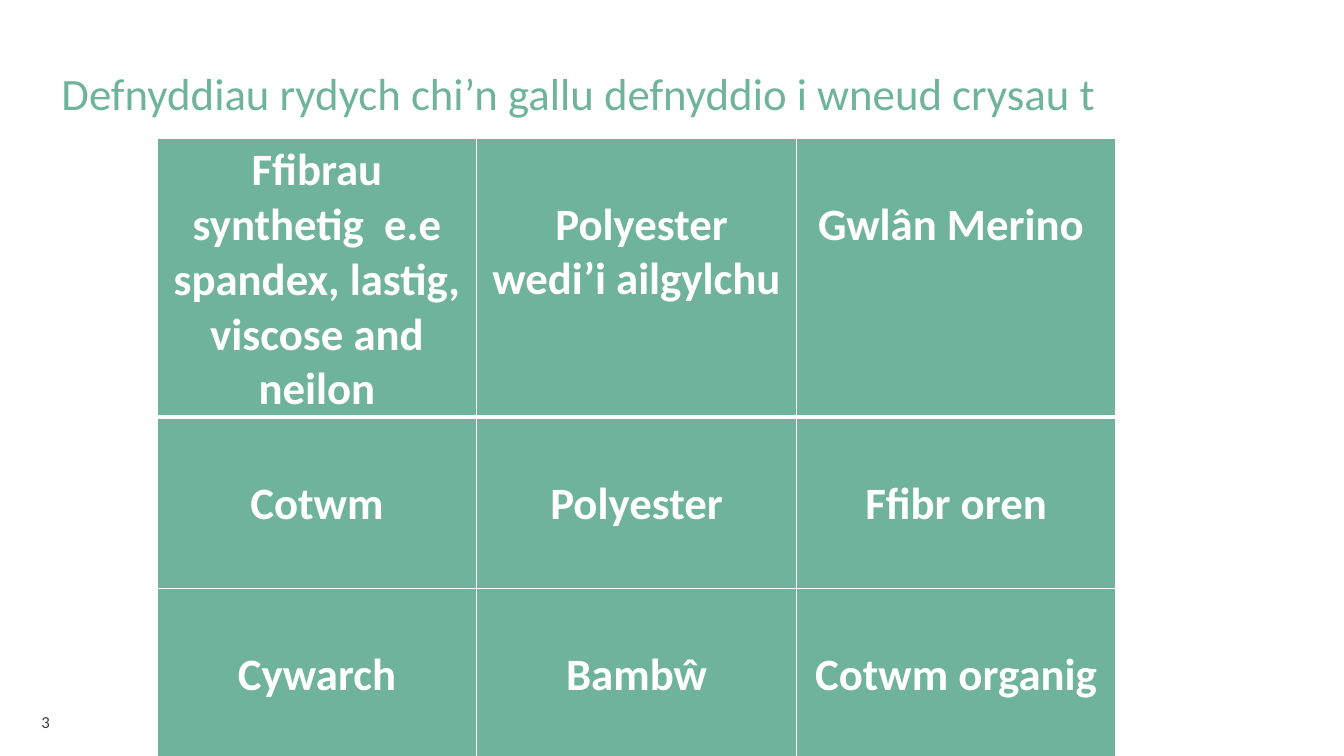
from dataclasses import dataclass

from lxml.etree import SubElement
from pptx import Presentation
from pptx.dml.color import RGBColor
from pptx.enum.text import MSO_ANCHOR as Anchor, MSO_AUTO_SIZE as AutoSize, PP_ALIGN as Align
from pptx.oxml.ns import qn
from pptx.util import Inches, Pt


@dataclass(frozen=True)
class Theme:
    font: str = "Calibri"
    green: str = "6FB39D"
    white: str = "FFFFFF"
    dark: str = "3C3C3B"
    large: int = 32
    small: int = 12
    thin_line: int = 1
    thick_line: int = 3


THEME = Theme()
TITLE = "Defnyddiau rydych chi’n gallu defnyddio i wneud crysau t"
MATERIALS = [
    ["Ffibrau synthetig  e.e spandex, lastig, viscose and neilon",
     " Polyester wedi’i ailgylchu", "Gwlân Merino "],
    ["Cotwm", "Polyester", "Ffibr oren"],
    ["Cywarch", "Bambŵ", "Cotwm organig"],
]
COLUMN_WIDTH = 3.17
ROW_HEIGHTS = [2.77, 1.7, 1.7]
TOP_INSET = 0.05
BOTTOM_INSET = 0.01
LINE_HEIGHT = 0.54


def apply_format(target, values):
    for name, value in values.items():
        setattr(target, name, value)


def write_text(frame, text, size, color, align=Align.LEFT, bold=False):
    para = frame.paragraphs[0]
    para.alignment = align
    span = para.add_run()
    span.text = text
    apply_format(span.font, {"name": THEME.font, "size": Pt(size), "bold": bold})
    span.font.color.rgb = RGBColor.from_string(color)


def place(shape, left, top, width, height):
    apply_format(shape, {"left": Inches(left), "top": Inches(top),
                         "width": Inches(width), "height": Inches(height)})


def add_title(page):
    title = page.shapes.title
    place(title, 0.51, 0.6, 12.61, 0.64)
    apply_format(title.text_frame, {"word_wrap": True, "auto_size": AutoSize.NONE,
                                    "vertical_anchor": Anchor.TOP})
    write_text(title.text_frame, TITLE, THEME.large, THEME.green)


def add_page_number(page, number):
    box = page.shapes.add_textbox(Inches(0.41), Inches(7.06), Inches(1.9), Inches(0.2))
    apply_format(box.text_frame, {"word_wrap": True, "margin_left": 0, "margin_top": 0,
                                  "margin_right": 0, "margin_bottom": 0})
    write_text(box.text_frame, str(number), THEME.small, THEME.dark)


def add_border(cell, side, width):
    properties = cell._tc.get_or_add_tcPr()
    line = SubElement(properties, qn(f"a:ln{side}"), w=str(Pt(width)))
    fill = SubElement(line, qn("a:solidFill"))
    SubElement(fill, qn("a:srgbClr"), val=THEME.white)


def format_cell(cell, text, row, column):
    starts_at_top = row == 0 and column == 0
    top = TOP_INSET if starts_at_top else TOP_INSET + LINE_HEIGHT
    apply_format(cell, {"margin_left": Inches(0.1), "margin_right": Inches(0.1),
                        "margin_top": Inches(top), "margin_bottom": Inches(BOTTOM_INSET),
                        "vertical_anchor": Anchor.TOP})
    thick_side = {0: "B", 1: "T"}.get(row)
    for side in "LRTB":
        add_border(cell, side, THEME.thick_line if side == thick_side else THEME.thin_line)
    cell.fill.solid()
    cell.fill.fore_color.rgb = RGBColor.from_string(THEME.green)
    write_text(cell.text_frame, text, THEME.large, THEME.white, Align.CENTER, True)


def add_materials_table(page):
    columns = len(MATERIALS[0])
    frame = page.shapes.add_table(len(MATERIALS), columns, Inches(1.56), Inches(1.37),
                                  Inches(COLUMN_WIDTH * columns), Inches(sum(ROW_HEIGHTS)))
    table = frame.table
    table.horz_banding = False
    for column in table.columns:
        column.width = Inches(COLUMN_WIDTH)
    for row, texts in enumerate(MATERIALS):
        table.rows[row].height = Inches(ROW_HEIGHTS[row])
        for column, text in enumerate(texts):
            format_cell(table.cell(row, column), text, row, column)


def main():
    deck = Presentation()
    apply_format(deck, {"slide_width": Inches(13.33), "slide_height": Inches(7.5)})
    page = deck.slides.add_slide(deck.slide_layouts.get_by_name("Title Only"))
    add_page_number(page, 3)
    add_title(page)
    add_materials_table(page)
    deck.save("out.pptx")


if __name__ == "__main__":
    main()
